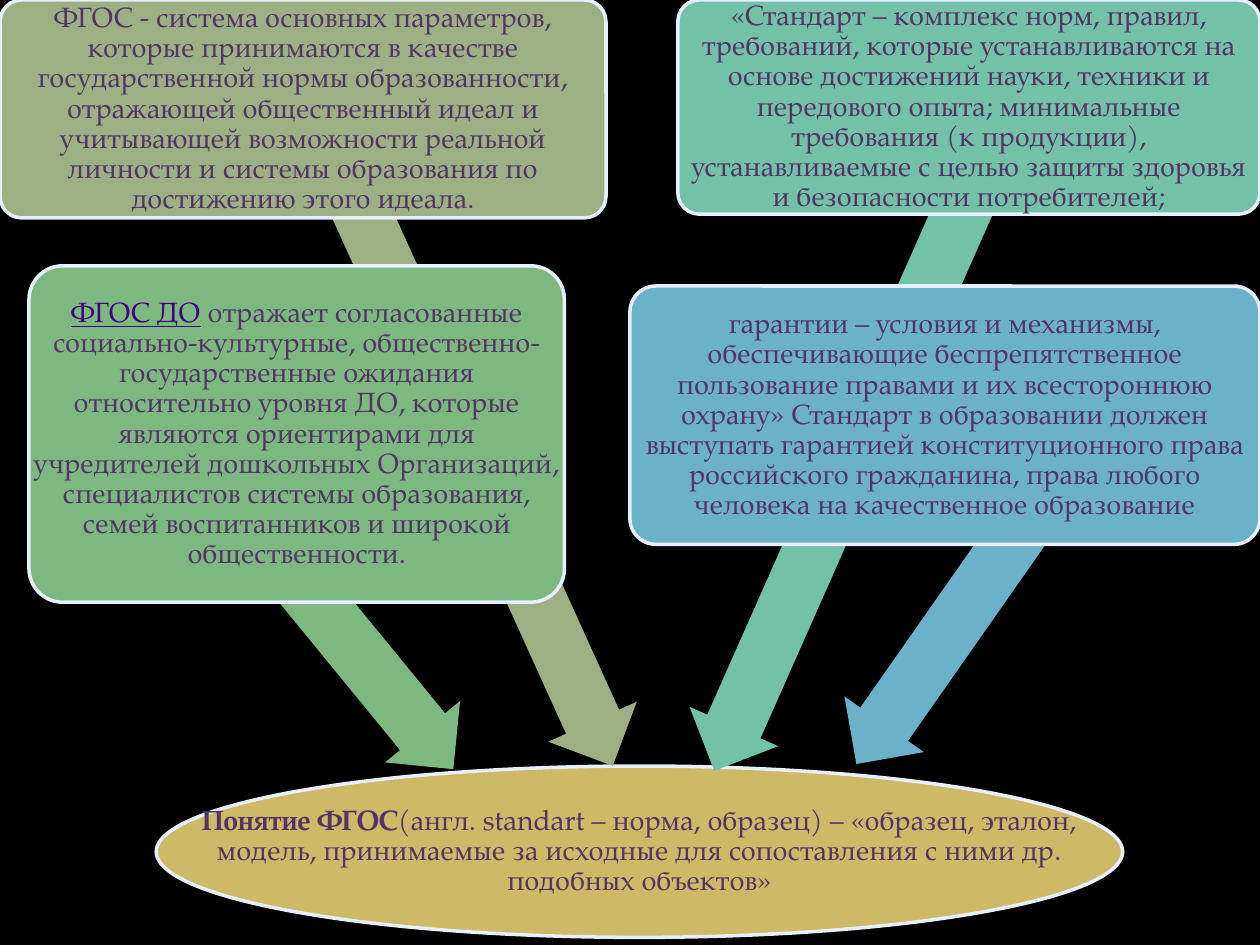
from dataclasses import dataclass

from pptx import Presentation
from pptx.dml.color import RGBColor
from pptx.enum import shapes, text
from pptx.util import Inches, Pt

FONT = "TeX Gyre Pagella"
HEX = {
    "back": "000000", "edge": "E7EFFE", "ink": "543466", "term": "410082",
    "gold": "CEB966", "olive": "9CB084", "green": "7CB87F",
    "teal": "73C1A6", "blue": "6BB1C9",
}
KIND = shapes.MSO_SHAPE
Area = tuple[float, float, float, float]


@dataclass
class Run:
    text: str
    bold: bool = False
    line: bool = False
    ink: str = "ink"


@dataclass
class Arrow:
    area: Area
    turn: float


@dataclass
class Card:
    area: Area
    fill: str
    runs: list[Run]
    arrow: Arrow


def rgb(name: str) -> RGBColor:
    return RGBColor.from_string(HEX[name])


def add_form(slide, kind, area: Area, fill: str):
    form = slide.shapes.add_shape(kind, *map(Inches, area))
    form.shadow.inherit = False
    form.fill.solid()
    form.fill.fore_color.rgb = rgb(fill)
    form.line.fill.background()
    return form


def add_edge(form) -> None:
    form.line.color.rgb = rgb("edge")
    form.line.width = Pt(2)


def add_text(slide, area: Area, runs: list[Run], pad: float) -> None:
    """Text spans the full frame, past the inset of the form beneath."""
    frame = slide.shapes.add_textbox(*map(Inches, area)).text_frame
    frame.word_wrap = True
    frame.vertical_anchor = text.MSO_ANCHOR.MIDDLE
    frame.margin_left = frame.margin_right = Inches(pad)
    frame.margin_top = frame.margin_bottom = Inches(pad)
    para = frame.paragraphs[0]
    para.alignment = text.PP_ALIGN.CENTER
    para.line_spacing = 0.9
    para.font.size = Pt(16)
    para.font.name = FONT
    for item in runs:
        run = para.add_run()
        run.text = item.text
        run.font.bold = item.bold
        run.font.underline = item.line
        run.font.color.rgb = rgb(item.ink)


def add_card(slide, card: Card) -> None:
    arrow = add_form(slide, KIND.LEFT_ARROW, card.arrow.area, card.fill)
    arrow.adjustments[0] = 0.6
    arrow.adjustments[1] = 0.5
    arrow.rotation = card.arrow.turn
    box = add_form(slide, KIND.ROUNDED_RECTANGLE, card.area, card.fill)
    box.adjustments[0] = 0.1
    add_edge(box)
    add_text(slide, card.area, card.runs, 0.03)


# Central concept
HUB: Area = (1.24, 6.08, 7.67, 1.36)
IDEA = [
    Run("Понятие ФГОС", bold=True),
    Run("(англ. standart – норма, образец) – «образец, эталон, модель, "
        "принимаемые за исходные для сопоставления с ними др. подобных "
        "объектов»"),
]

# Definitions pointing at the concept
CARDS = [
    Card((0, 0, 4.81, 1.73), "olive", [
        Run("ФГОС - система основных параметров, которые принимаются в "
            "качестве государственной нормы образованности, отражающей "
            "общественный идеал и учитывающей возможности реальной личности "
            "и системы образования по достижению этого идеала."),
    ], Arrow((1.04, 3.23, 5.41, 0.77), 245.6)),
    Card((0.23, 2.11, 4.25, 2.67), "green", [
        Run("ФГОС ДО", line=True, ink="term"),
        Run(" отражает согласованные социально-культурные, "
            "общественно-государственные ожидания относительно уровня ДО, "
            "которые являются ориентирами для учредителей дошкольных "
            "Организаций, специалистов системы образования, семей "
            "воспитанников и широкой общественности."),
    ], Arrow((0.96, 4.47, 3.23, 0.77), 230.7)),
    Card((5.38, 0, 4.62, 1.7), "teal", [
        Run("«Стандарт – комплекс норм, правил, требований, которые "
            "устанавливаются на основе достижений науки, техники и "
            "передового опыта; минимальные требования (к продукции), "
            "устанавливаемые с целью защиты здоровья и безопасности "
            "потребителей;"),
    ], Arrow((4.06, 3.26, 5.41, 0.77), 293.9)),
    Card((5, 2.27, 5, 2.05), "blue", [
        Run("гарантии – условия и механизмы, обеспечивающие "
            "беспрепятственное пользование правами и их всестороннюю охрану» "
            "Стандарт в образовании должен выступать гарантией "
            "конституционного права российского гражданина, права любого "
            "человека на качественное образование"),
    ], Arrow((6.11, 4.36, 3.22, 0.77), 305)),
]


def main() -> None:
    deck = Presentation()
    deck.slide_width, deck.slide_height = Inches(10), Inches(7.5)
    slide = deck.slides.add_slide(deck.slide_layouts[6])
    slide.background.fill.solid()
    slide.background.fill.fore_color.rgb = rgb("back")

    add_edge(add_form(slide, KIND.OVAL, HUB, "gold"))
    add_text(slide, HUB, IDEA, 0.01)
    for card in CARDS:
        add_card(slide, card)
    deck.save("out.pptx")


if __name__ == "__main__":
    main()
